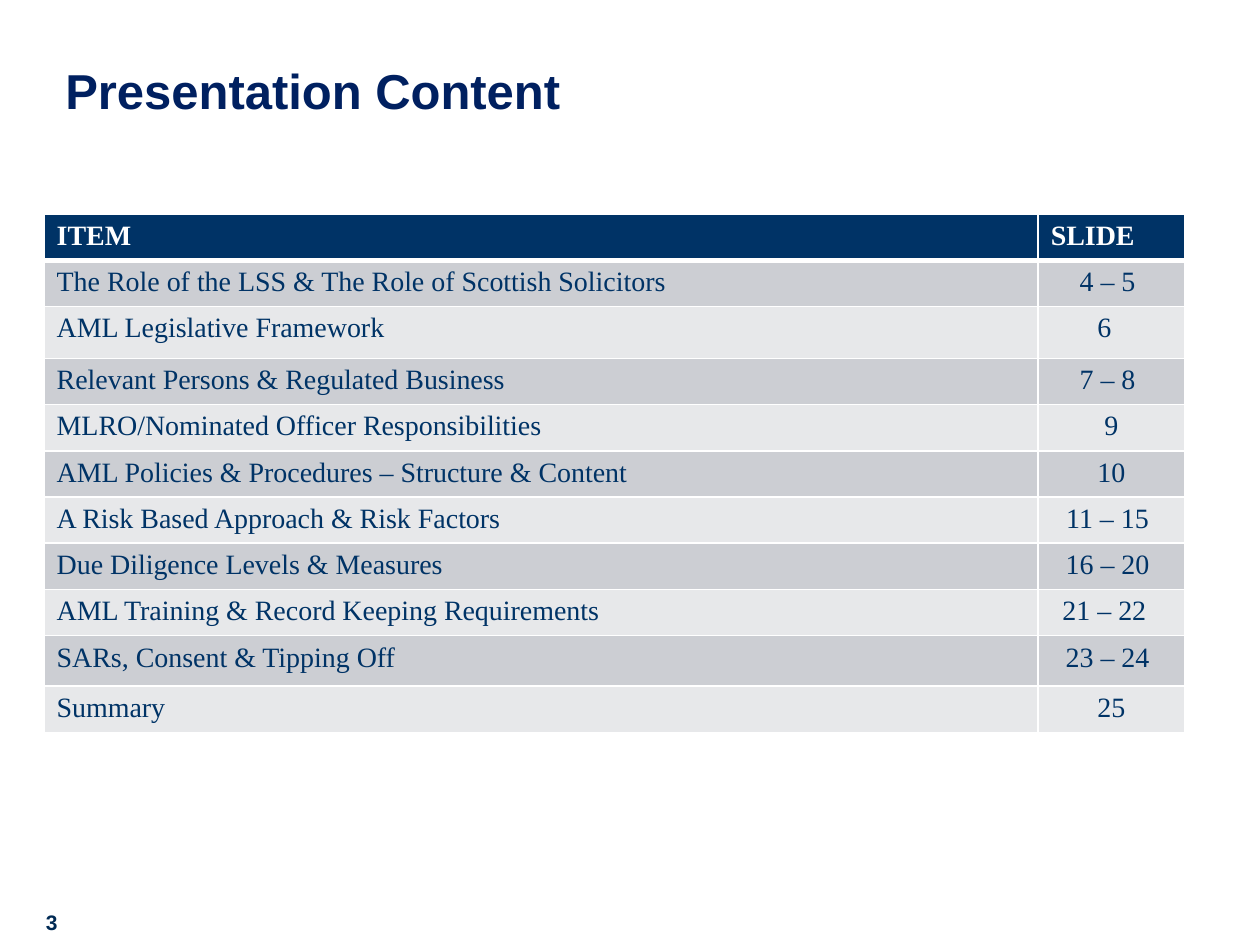
import pptx
import pptx.util
import pptx.dml.color
import pptx.enum.text
import pptx.oxml
import pptx.oxml.ns

Inches = pptx.util.Inches
RGBColor = pptx.dml.color.RGBColor
Align = pptx.enum.text.PP_ALIGN
Anchor = pptx.enum.text.MSO_ANCHOR

TITLE_BLUE = RGBColor(0x00, 0x20, 0x60)
TABLE_BLUE = RGBColor(0x00, 0x33, 0x66)
NUMBER_BLUE = RGBColor(0x00, 0x2A, 0x54)
WHITE = RGBColor(0xFF, 0xFF, 0xFF)
BANDS = (RGBColor(0xCC, 0xCE, 0xD3), RGBColor(0xE7, 0xE8, 0xEA))

# Item, slide range, row height, right cell margin
CONTENTS = [
    ("The Role of the LSS & The Role of Scottish Solicitors", "4 – 5", 0.34, 0.16),
    ("AML Legislative Framework", "6", 0.41, 0.21),
    ("Relevant Persons & Regulated Business", "7 – 8", 0.34, 0.16),
    ("MLRO/Nominated Officer Responsibilities", "9", 0.34, 0.1),
    ("AML Policies & Procedures – Structure & Content", "10", 0.34, 0.1),
    ("A Risk Based Approach & Risk Factors", "11 – 15", 0.34, 0.16),
    ("Due Diligence Levels & Measures", "16 – 20", 0.34, 0.16),
    ("AML Training & Record Keeping Requirements", "21 – 22", 0.34, 0.21),
    ("SARs, Consent & Tipping Off", "23 – 24", 0.4, 0.16),
    ("Summary", "25", 0.34, 0.1),
]


class SlideBuilder:
    title = {"name": "Arial", "size": 28, "bold": True, "color": TITLE_BLUE}
    number = {"name": "Arial", "size": 12, "bold": True, "color": NUMBER_BLUE}
    header = {"name": "Times New Roman", "size": 16, "bold": True, "color": WHITE}
    body = {**header, "bold": False, "color": TABLE_BLUE}

    def __init__(self, slide):
        self.slide = slide

    def add_words(self, paragraph, text, style, alignment):
        run = paragraph.add_run()
        run.text = text
        paragraph.alignment = alignment
        for key, value in style.items():
            if key == "color":
                run.font.color.rgb = value
            else:
                setattr(run.font, key, pptx.util.Pt(value) if key == "size" else value)

    def text(self, place, text, style, alignment=Align.LEFT, line_spacing=1.0):
        shape = self.slide.shapes.add_textbox(*map(Inches, place))
        frame = shape.text_frame
        frame.word_wrap = True
        frame.vertical_anchor = Anchor.BOTTOM
        paragraph = frame.paragraphs[0]
        paragraph.line_spacing = line_spacing
        self.add_words(paragraph, text, style, alignment)

    def cell(self, cell, text, style, fill, alignment=Align.LEFT, bottom=1):
        self.add_words(cell.text_frame.paragraphs[0], text, style, alignment)
        cell.fill.solid()
        cell.fill.fore_color.rgb = fill
        # White cell borders
        properties = cell._tc.get_or_add_tcPr()
        for index, side in enumerate("LRTB"):
            width = pptx.util.Pt(bottom if side == "B" else 1)
            properties.insert(index, pptx.oxml.parse_xml(
                f'<a:ln{side} {pptx.oxml.ns.nsdecls("a")} w="{width}"><a:solidFill>'
                f'<a:srgbClr val="{WHITE}"/></a:solidFill></a:ln{side}>'))

    def table(self, place, widths, headings, rows):
        table = self.slide.shapes.add_table(
            len(rows) + 1, len(widths), *map(Inches, place)).table
        for column, width in zip(table.columns, widths):
            column.width = Inches(width)
        table.rows[0].height = Inches(0.36)
        for index, heading in enumerate(headings):
            self.cell(table.cell(0, index), heading, self.header, TABLE_BLUE, bottom=3)
        for index, (item, pages, height, margin) in enumerate(rows, start=1):
            fill = BANDS[(index - 1) % 2]
            table.rows[index].height = Inches(height)
            self.cell(table.cell(index, 0), item, self.body, fill)
            page_cell = table.cell(index, 1)
            page_cell.margin_right = Inches(margin)
            self.cell(page_cell, pages, self.body, fill, Align.CENTER)


def main():
    presentation = pptx.Presentation()
    presentation.slide_width = Inches(10)
    presentation.slide_height = Inches(7.5)
    builder = SlideBuilder(presentation.slides.add_slide(presentation.slide_layouts[6]))

    # Title
    builder.text((0.42, 0.36, 5.68, 0.64), "Presentation Content", builder.title,
                 line_spacing=0.9)
    # Contents table
    builder.table((0.35, 1.7, 9.05, 3.9), (7.89, 1.16), ("ITEM", "SLIDE"), CONTENTS)
    # Slide number
    builder.text((0.09, 7.17, 0.64, 0.3), "3", builder.number, Align.CENTER)

    presentation.save("out.pptx")


if __name__ == "__main__":
    main()
